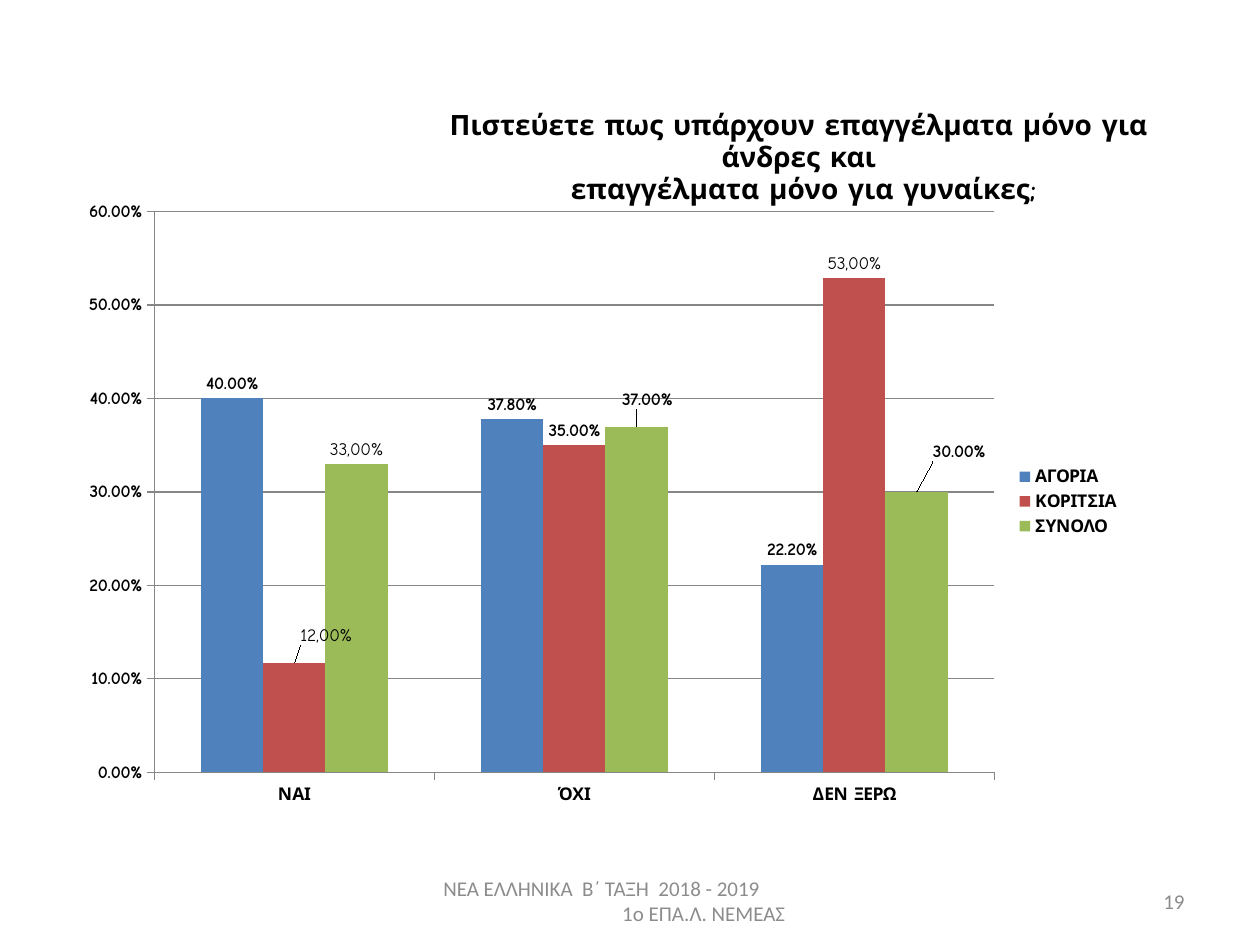
import pptx
import pptx.chart.data
import pptx.dml.color
import pptx.enum.chart
import pptx.enum.text
import pptx.oxml
import pptx.util
from pptx.util import Inches

BLACK = pptx.dml.color.RGBColor(0x00, 0x00, 0x00)
GRAY = pptx.dml.color.RGBColor(0x8C, 0x8C, 0x8C)
LINE = pptx.dml.color.RGBColor(0x86, 0x86, 0x86)
BLUE = pptx.dml.color.RGBColor(0x4F, 0x81, 0xBD)
RED = pptx.dml.color.RGBColor(0xC0, 0x50, 0x4D)
GREEN = pptx.dml.color.RGBColor(0x9B, 0xBB, 0x59)
CHART_NS = "http://schemas.openxmlformats.org/drawingml/2006/chart"
ALIGN = pptx.enum.text.PP_ALIGN
ANCHOR = pptx.enum.text.MSO_ANCHOR
OUTSIDE_END = pptx.enum.chart.XL_LABEL_POSITION.OUTSIDE_END


def set_font(font, size, color, name, bold=False):
    font.size = pptx.util.Pt(size)
    font.color.rgb = color
    font.name = name
    font.bold = bold


def make_layout(**values):
    target = '<c:layoutTarget val="inner"/>' if "w" in values else ""
    modes = '<c:xMode val="edge"/><c:yMode val="edge"/>' if target else ""
    sizes = "".join(f'<c:{key} val="{value}"/>' for key, value in values.items())
    return pptx.oxml.parse_xml(
        f'<c:layout xmlns:c="{CHART_NS}"><c:manualLayout>'
        f"{target}{modes}{sizes}</c:manualLayout></c:layout>"
    )


prs = pptx.Presentation()
prs.slide_width = Inches(10)
prs.slide_height = Inches(7.5)
s = prs.slides.add_slide(prs.slide_layouts[6])

footers = [
    (3.42, 3.17, ALIGN.LEFT, ["ΝΕΑ ΕΛΛΗΝΙΚΑ  Β΄ ΤΑΞΗ  2018 - 2019", "1ο ΕΠΑ.Λ. ΝΕΜΕΑΣ"]),
    (7.17, 2.33, ALIGN.RIGHT, ["19"]),
]
for left, width, align, lines in footers:
    tf = s.shapes.add_textbox(Inches(left), Inches(6.95), Inches(width), Inches(0.4)).text_frame
    tf.word_wrap = True
    tf.vertical_anchor = ANCHOR.MIDDLE
    tf.text = "\n".join(lines)
    for i, p in enumerate(tf.paragraphs):
        p.alignment = align
        set_font(p.runs[0].font, 12, GRAY, "Calibri")
        if i:
            p._p.get_or_add_pPr().set("marL", str(Inches(1.42)))

data = pptx.chart.data.CategoryChartData(number_format="0.00%")
data.categories = ["ΝΑΙ", "ΌΧΙ", "ΔΕΝ ΞΕΡΩ"]
data.add_series("ΑΓΟΡΙΑ ", [0.4, 0.378, 0.222])
data.add_series("ΚΟΡΙΤΣΙΑ", [0.117, 0.35, 0.529])
data.add_series("ΣΥΝΟΛΟ", [0.33, 0.37, 0.3])
chart = s.shapes.add_chart(
    pptx.enum.chart.XL_CHART_TYPE.COLUMN_CLUSTERED,
    Inches(0.55), Inches(1.48), Inches(8.44), Inches(5), data,
).chart
chart.has_title = False
set_font(chart.font, 10, BLACK, "Calibri")
chart.has_legend = True
chart.legend.position = pptx.enum.chart.XL_LEGEND_POSITION.RIGHT
chart.legend.include_in_layout = False
set_font(chart.legend.font, 10, BLACK, "Comic Neue", True)

plot_area = chart._chartSpace.chart.plotArea
for old in plot_area.findall(f"{{{CHART_NS}}}layout"):
    plot_area.remove(old)
plot_area.insert(0, make_layout(x=0.08, y=0.04, w=0.79, h=0.89))

for axis in (chart.category_axis, chart.value_axis):
    set_font(axis.tick_labels.font, 10, BLACK, "Comic Neue", True)
    axis.major_tick_mark = pptx.enum.chart.XL_TICK_MARK.OUTSIDE
    axis.format.line.color.rgb = LINE
    axis.format.line.width = pptx.util.Pt(0.75)
axis = chart.value_axis
axis.minimum_scale = 0
axis.maximum_scale = 0.6
axis.major_unit = 0.1
axis.tick_labels.number_format = "0.00%"
axis.tick_labels.number_format_is_linked = False
axis.has_major_gridlines = True
axis.major_gridlines.format.line.color.rgb = LINE
axis.major_gridlines.format.line.width = pptx.util.Pt(0.75)

plot = chart.plots[0]
plot.gap_width = 150
plot.overlap = 0
plot.vary_by_categories = False
for series, color in zip(plot.series, (BLUE, RED, GREEN)):
    series.format.fill.solid()
    series.format.fill.fore_color.rgb = color
    labels = series.data_labels
    labels.show_value = True
    labels.number_format = "0.00%"
    labels.number_format_is_linked = False
    labels.position = OUTSIDE_END
    set_font(labels.font, 10, BLACK, "Comic Neue", True)

point_labels = [
    (1, 0, "12,00%", 0.03, -0.02),
    (1, 2, "53,00%", 0, 0),
    (2, 0, "33,00%", 0, 0),
    (2, 1, None, 0.01, -0.02),
    (2, 2, None, 0.04, -0.04),
]
for series_index, point_index, text, dx, dy in point_labels:
    label = plot.series[series_index].points[point_index].data_label
    if text:
        label.text_frame.text = text
        set_font(label.text_frame.paragraphs[0].runs[0].font, 10, BLACK, "Comic Neue")
    else:
        set_font(label.font, 10, BLACK, "Comic Neue", True)
    label.position = OUTSIDE_END
    if dx:
        label._dLbl.insert(1, make_layout(x=dx, y=dy))

table = s.shapes.add_table(1, 1, Inches(3.27), Inches(0.84), Inches(6.14), Inches(0.7)).table
table.first_row = False
table.horz_banding = False
cell = table.cell(0, 0)
cell.fill.background()
cell.vertical_anchor = ANCHOR.BOTTOM
cell.margin_left = cell.margin_right = cell.margin_top = cell.margin_bottom = 0
cell.text_frame.text = (
    "Πιστεύετε πως υπάρχουν επαγγέλματα μόνο για άνδρες και\n"
    " επαγγέλματα μόνο για γυναίκες;"
)
for p in cell.text_frame.paragraphs:
    p.alignment = ALIGN.CENTER
    set_font(p.runs[0].font, 16, BLACK, "Comic Neue", True)

prs.save("out.pptx")
